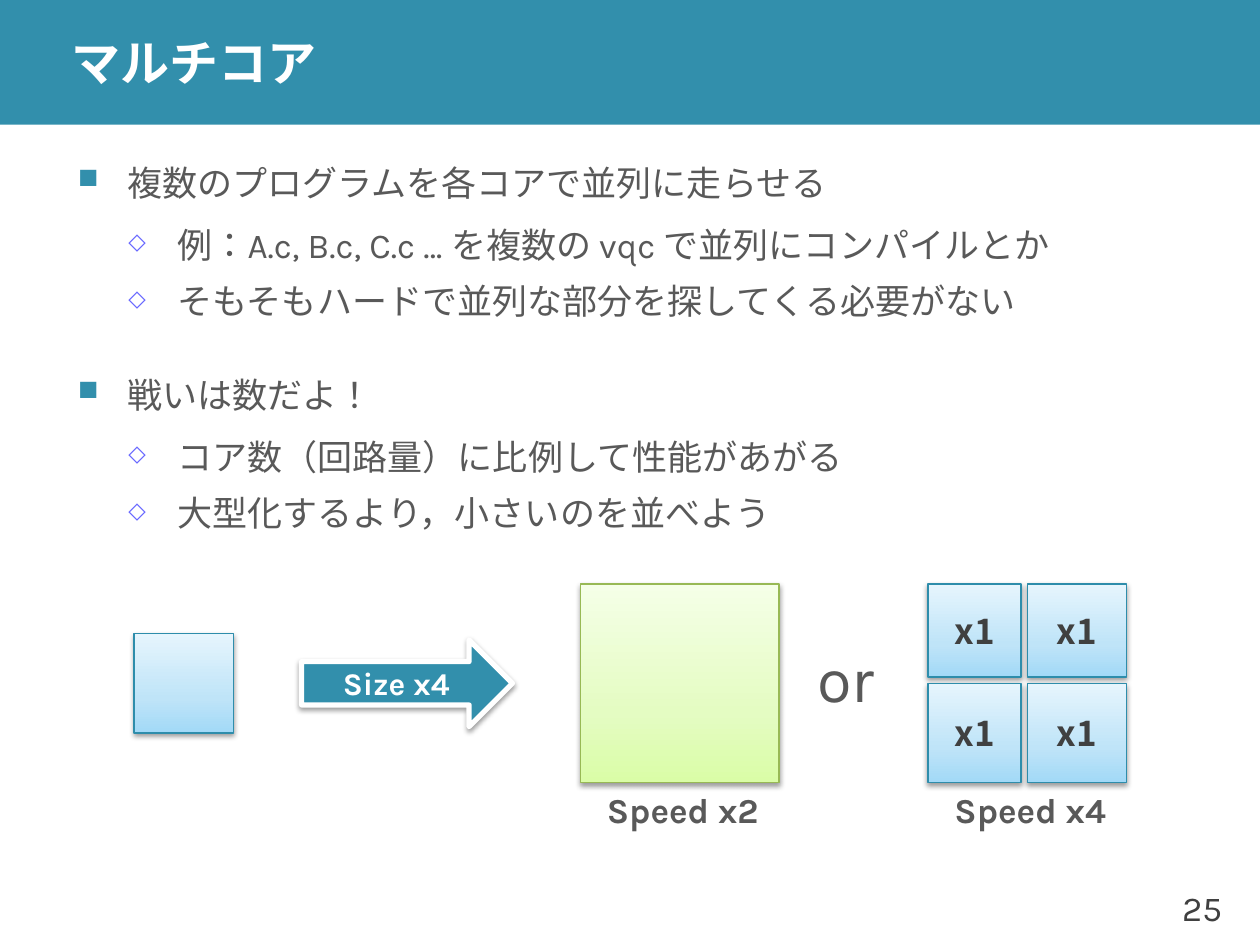
from typing import NamedTuple

from lxml.etree import SubElement
from pptx import Presentation
from pptx.dml.color import RGBColor
from pptx.enum.shapes import MSO_SHAPE
from pptx.enum.text import MSO_ANCHOR, PP_ALIGN
from pptx.oxml.ns import qn
from pptx.util import Inches, Pt

SLIDE_W, SLIDE_H = 10, 7.5
CELL = 0.1969  # half a centimetre
ORIGIN_X, ORIGIN_Y = 0.08, -0.09
LATIN, JAPANESE = "Karla", "Noto Sans CJK JP"
TEAL, WHITE, GREY, DARK = "328FAC", "FFFFFF", "595959", "404040"


class Box(NamedTuple):
    left: float
    top: float
    width: float
    height: float

    def emu(self) -> list:
        return [Inches(length) for length in self]


class Level(NamedTuple):
    bullet: str
    bullet_color: str
    bullet_percent: int
    margin: float
    before: float
    after: float


class Core(NamedTuple):
    col: float
    row: float
    cols: float
    rows: float
    label: str
    palette: tuple
    outline: str


class Label(NamedTuple):
    col: float
    row: float
    cols: float
    rows: float
    text: str
    size: float
    bold: bool
    align: PP_ALIGN


LEVELS = (Level("■", TEAL, 80, 0.39, 24, 6), Level("◇", "6666FF", 65, 0.79, 3, 3))
BODY = (
    (0, "複数のプログラムを各コアで並列に走らせる"),
    (1, "例：A.c, B.c, C.c … を複数の vqc で並列にコンパイルとか"),
    (1, "そもそもハードで並列な部分を探してくる必要がない"),
    (0, "戦いは数だよ！"),
    (1, "コア数（回路量）に比例して性能があがる"),
    (1, "大型化するより，小さいのを並べよう"),
)

GREEN = (("DAFDA7", "E4FCC2", "F5FFE7"), "98B955")
BLUE = (("A2D9F7", "BFE4F8", "E6F5FD"), "2E8DAB")
CORES = [Core(23, 24, 8, 8, "", *GREEN), Core(5, 26, 4, 4, "", *BLUE)] + [
    Core(col, row, cols, rows, "x1", *BLUE)
    for row, rows in ((24, 3.75), (28, 4))
    for col, cols in ((37, 3.75), (41, 4))
]
LABELS = (
    Label(29.5, 26, 6, 3.6, "or", 36, False, PP_ALIGN.LEFT),
    Label(35, 32, 9.7, 2.25, "Speed x4", 20, True, PP_ALIGN.CENTER),
    Label(21, 32, 9.7, 2.25, "Speed x2", 20, True, PP_ALIGN.CENTER),
)


def share(left: float, top: float, width: float, height: float) -> Box:
    """Box given as shares of the slide's size."""
    return Box(left * SLIDE_W, top * SLIDE_H, width * SLIDE_W, height * SLIDE_H)


def grid(col: float, row: float, cols: float, rows: float) -> Box:
    return Box(ORIGIN_X + col * CELL, ORIGIN_Y + row * CELL, cols * CELL, rows * CELL)


def rgb(color: str) -> RGBColor:
    return RGBColor.from_string(color)


def write(paragraph, text: str, *, size: float = 20, color: str = GREY,
          bold: bool = False, align: PP_ALIGN = PP_ALIGN.LEFT,
          font: str = LATIN, margin: float = 0) -> None:
    paragraph.alignment = align
    if margin:
        paragraph._p.get_or_add_pPr().set("marL", str(Inches(margin)))
    run = paragraph.add_run()
    run.text = text
    run.font.size = Pt(size)
    run.font.bold = bold
    run.font.name = font
    run.font.color.rgb = rgb(color)
    properties = run._r.get_or_add_rPr()
    properties.set("lang", "ja-JP")
    SubElement(properties, qn("a:ea"), typeface=JAPANESE)


def add_text_frame(slide, box: Box, *, wrap: bool = True,
                   anchor: MSO_ANCHOR = MSO_ANCHOR.MIDDLE):
    frame = slide.shapes.add_textbox(*box.emu()).text_frame
    frame.word_wrap = wrap
    frame.vertical_anchor = anchor
    return frame


def add_plain_shape(slide, kind: MSO_SHAPE, box: Box, fill: str):
    shape = slide.shapes.add_shape(kind, *box.emu())
    shape.shadow.inherit = False
    shape.fill.solid()
    shape.fill.fore_color.rgb = rgb(fill)
    shape.line.fill.background()
    return shape


def set_outline(shape, color: str, width: float) -> None:
    shape.line.color.rgb = rgb(color)
    shape.line.width = Pt(width)


def cast_shadow(shape) -> None:
    effects = shape._element.spPr.find(qn("a:effectLst"))
    shadow = SubElement(effects, qn("a:outerShdw"), blurRad=str(Pt(3.1)),
                        dist=str(Pt(1.6)), dir="5400000", rotWithShape="0")
    color = SubElement(shadow, qn("a:srgbClr"), val="000000")
    SubElement(color, qn("a:alpha"), val="38000")


def fill_upward(shape, palette: tuple) -> None:
    """Gradient of three colours from the bottom to the top."""
    shape.fill.gradient()
    shape.fill.gradient_angle = 90
    stops = shape._element.spPr.find(qn("a:gradFill")).find(qn("a:gsLst"))
    for stop in list(stops):
        stops.remove(stop)
    for percent, color in zip((0, 35, 100), palette):
        stop = SubElement(stops, qn("a:gs"), pos=str(percent * 1000))
        SubElement(stop, qn("a:srgbClr"), val=color)


def add_core(slide, core: Core) -> None:
    shape = add_plain_shape(slide, MSO_SHAPE.RECTANGLE, grid(*core[:4]), WHITE)
    fill_upward(shape, core.palette)
    set_outline(shape, core.outline, 0.75)
    cast_shadow(shape)
    if core.label:
        shape.text_frame.word_wrap = False
        write(shape.text_frame.paragraphs[0], core.label, color=DARK, bold=True,
              align=PP_ALIGN.CENTER, font=JAPANESE)


def add_growth_arrow(slide) -> None:
    arrow = add_plain_shape(slide, MSO_SHAPE.RIGHT_ARROW, grid(11.75, 26.25, 8.5, 3.5), TEAL)
    set_outline(arrow, WHITE, 3)
    cast_shadow(arrow)
    write(arrow.text_frame.paragraphs[0], "Size x4", size=18, color=WHITE,
          bold=True, align=PP_ALIGN.CENTER)


def add_bullets(slide) -> None:
    frame = add_text_frame(slide, share(0.052, 0.159, 0.915, 0.413))
    for index, (depth, text) in enumerate(BODY):
        paragraph = frame.add_paragraph() if index else frame.paragraphs[0]
        level = LEVELS[depth]
        paragraph.level = depth
        paragraph.line_spacing = 1.1
        paragraph.space_before = Pt(level.before)
        paragraph.space_after = Pt(level.after)
        write(paragraph, text, margin=level.margin)
        properties = paragraph._p.get_or_add_pPr()
        properties.set("indent", str(Inches(-0.39)))
        color = SubElement(properties, qn("a:buClr"))
        SubElement(color, qn("a:srgbClr"), val=level.bullet_color)
        SubElement(properties, qn("a:buSzPct"), val=str(level.bullet_percent * 1000))
        SubElement(properties, qn("a:buChar"), char=level.bullet)


def main() -> None:
    presentation = Presentation()
    presentation.slide_width, presentation.slide_height = Inches(SLIDE_W), Inches(SLIDE_H)
    slide = presentation.slides.add_slide(presentation.slide_layouts[6])

    add_plain_shape(slide, MSO_SHAPE.RECTANGLE, share(0, 0, 1, 0.132), TEAL)
    page = add_text_frame(slide, share(0.913, 0.92, 0.067, 0.08), wrap=False)
    write(page.paragraphs[0], "25", color=DARK, align=PP_ALIGN.RIGHT)
    title = add_text_frame(slide, share(0.047, 0, 0.953, 0.132))
    title.margin_top = title.margin_bottom = 0
    write(title.paragraphs[0], "マルチコア", size=28, color=WHITE, bold=True)
    add_bullets(slide)

    for core in CORES:
        add_core(slide, core)
    add_growth_arrow(slide)
    for label in LABELS:
        frame = add_text_frame(slide, grid(*label[:4]), wrap=False, anchor=MSO_ANCHOR.TOP)
        write(frame.paragraphs[0], label.text, size=label.size, bold=label.bold,
              align=label.align, margin=0.5)
    presentation.save("out.pptx")


if __name__ == "__main__":
    main()
